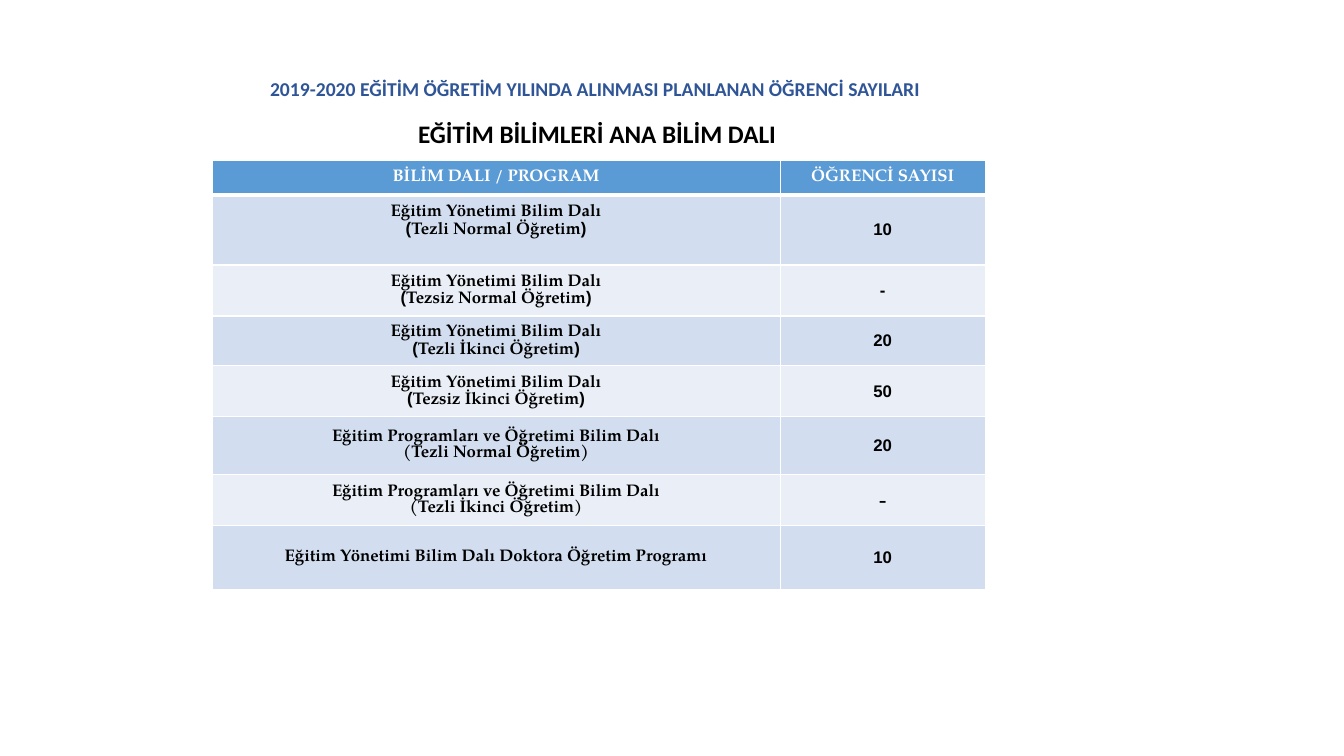
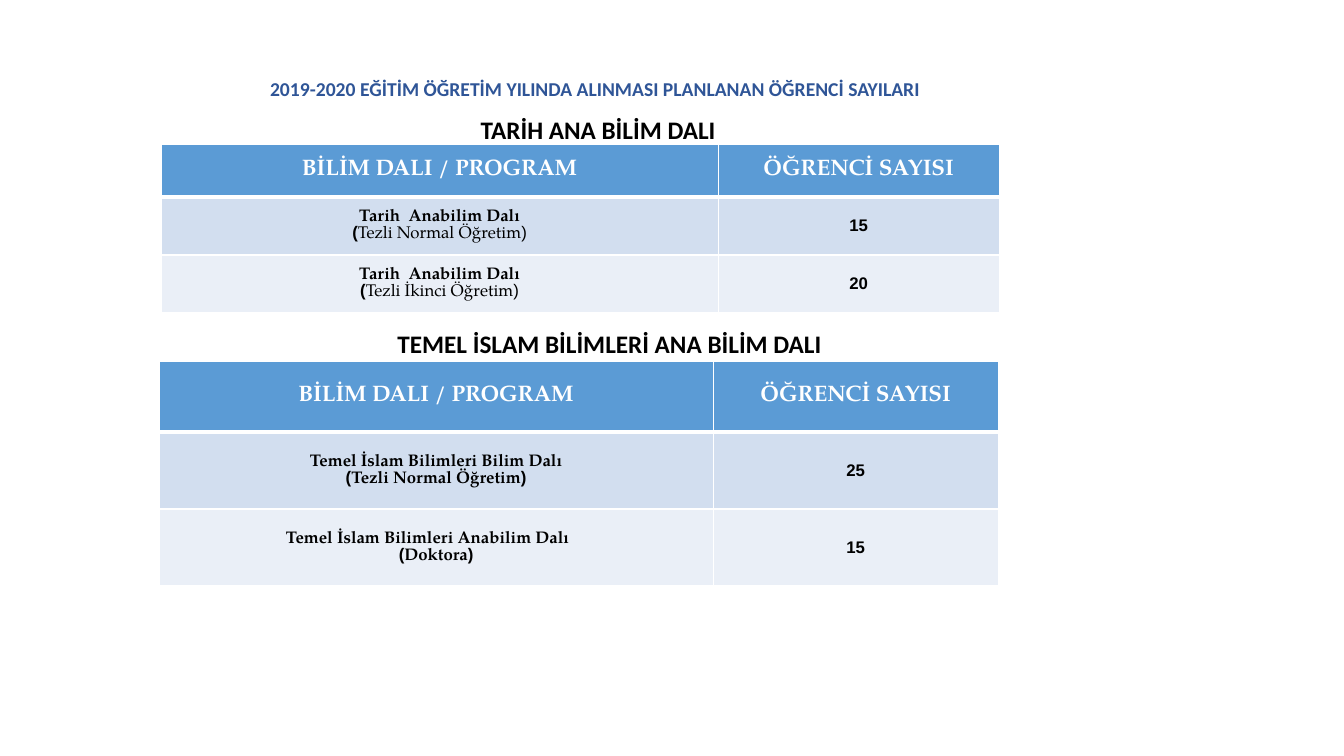
from lxml.etree import SubElement
from pptx import Presentation
from pptx.dml.color import RGBColor
from pptx.enum.text import MSO_ANCHOR, PP_ALIGN
from pptx.oxml import parse_xml
from pptx.oxml.ns import nsdecls, qn
from pptx.util import Emu, Inches, Pt

BLUE = RGBColor(0x5B, 0x9B, 0xD5)
NAVY = RGBColor(0x2F, 0x55, 0x97)
BAND_DARK = RGBColor(0xD2, 0xDE, 0xEF)
BAND_LIGHT = RGBColor(0xEA, 0xEF, 0xF7)
BLACK = RGBColor(0, 0, 0)
WHITE = RGBColor(0xFF, 0xFF, 0xFF)
SANS, SERIF, SCRIPT = "Calibri", "TeX Gyre Pagella", "Arial"

TITLE = "2019-2020 EĞİTİM ÖĞRETİM YILINDA ALINMASI PLANLANAN ÖĞRENCİ SAYILARI "
TITLE_BOX = (242, 72, 711, 34)
HEADERS = ("BİLİM DALI / PROGRAM", "ÖĞRENCİ SAYISI")

MANAGEMENT = "Eğitim Yönetimi Bilim Dalı"
CURRICULUM = "Eğitim Programları ve Öğretimi Bilim Dalı"
HISTORY = "Tarih  Anabilim Dalı"

SLIDES = [
    [
        dict(heading="EĞİTİM BİLİMLERİ ANA BİLİM DALI", heading_box=(406, 113, 382, 40),
             at=(212, 160), cols=(568, 205), heights=(35, 70, 51, 50, 51, 58, 51, 64),
             header_size=12,
             rows=[
                 dict(name=MANAGEMENT, mode="(Tezli Normal Öğretim)", count="10", bottom=23),
                 dict(name=MANAGEMENT, mode="(Tezsiz Normal Öğretim)", count="-"),
                 dict(name=MANAGEMENT, mode="(Tezli İkinci Öğretim)", count="20"),
                 dict(name=MANAGEMENT, mode="(Tezsiz İkinci Öğretim)", count="50"),
                 dict(name=CURRICULUM, mode="(Tezli Normal Öğretim)", count="20", rtl=False),
                 dict(name=CURRICULUM, mode="(Tezli İkinci Öğretim)", count="-", rtl=False,
                      plain_count=True),
                 dict(name="Eğitim Yönetimi Bilim Dalı Doktora Öğretim Programı", count="10"),
             ]),
    ],
    [
        dict(heading="TARİH ANA BİLİM DALI", heading_box=(469, 109, 258, 40),
             at=(161, 144), cols=(557, 281), heights=(53, 58, 58), header_size=16,
             rows=[
                 dict(name=HISTORY, mode="(Tezli Normal Öğretim)", count="15", light=True),
                 dict(name=HISTORY, mode="(Tezli İkinci Öğretim)", count="20", light=True),
             ]),
        dict(heading="TEMEL İSLAM BİLİMLERİ ANA BİLİM DALI", heading_box=(385, 323, 449, 40),
             at=(159, 361), cols=(554, 285), heights=(71, 77, 77), header_size=16,
             rows=[
                 dict(name="Temel İslam Bilimleri Bilim Dalı", mode="(Tezli Normal Öğretim)",
                      count="25"),
                 dict(name="Temel İslam Bilimleri Anabilim Dalı", mode="(Doktora)",
                      count="15", indent=17),
             ]),
    ],
]


def px(n):
    return Emu(round(n * 914400 / 100.8))


def add_run(p, text, size, color, font=SERIF, bold=True):
    r = p.add_run()
    r.text = text
    f = r.font
    f.size, f.bold, f.name = Pt(size), bold, font
    f.color.rgb = color
    if font == SERIF:
        SubElement(f._element, qn("a:cs")).set("typeface", SCRIPT)


def add_label(s, text, box, size, color, wrap):
    tf = s.shapes.add_textbox(*map(px, box)).text_frame
    tf.word_wrap = wrap
    p = tf.paragraphs[0]
    p.alignment = PP_ALIGN.CENTER
    add_run(p, text, size, color, SANS)


def set_borders(cell, top, bottom):
    tc_pr = cell._tc.get_or_add_tcPr()
    for i, (side, width) in enumerate((("L", 1), ("R", 1), ("T", top), ("B", bottom))):
        tc_pr.insert(i, parse_xml(
            f'<a:ln{side} {nsdecls("a")} w="{Pt(width)}"><a:solidFill>'
            f'<a:srgbClr val="{WHITE}"/></a:solidFill></a:ln{side}>'))


def fill_cell(cell, lines, fill, size=12, color=BLACK, font=SERIF, bold=True,
              rtl=True, bottom=5, indent=0):
    cell.fill.solid()
    cell.fill.fore_color.rgb = fill
    cell.vertical_anchor = MSO_ANCHOR.MIDDLE
    cell.margin_left = cell.margin_right = px(15)
    cell.margin_top, cell.margin_bottom = px(5), px(bottom)
    tf = cell.text_frame
    for i, runs in enumerate(lines):
        p = tf.add_paragraph() if i else tf.paragraphs[0]
        p.alignment = PP_ALIGN.CENTER
        p_pr = p._p.get_or_add_pPr()
        if rtl:
            p_pr.set("rtl", "1")
        if indent and i == 0:
            p_pr.set("marL", str(px(indent)))
        if len(lines) > 1:
            p.line_spacing = Pt(12.5 if rtl else 11.5)
        for text, weight in runs:
            add_run(p, text, size, color, font, bold and weight)


def program_lines(row):
    lines = [[(row["name"], True)]]
    mode = row.get("mode")
    if mode and row.get("light"):
        lines.append([(mode[:-1], False), (mode[-1], True)])
    elif mode:
        lines.append([(mode, True)])
    return lines


def add_program_table(s, spec):
    rows, cols, heights = spec["rows"], spec["cols"], spec["heights"]
    frame = s.shapes.add_table(len(heights), len(cols), *map(
        px, (*spec["at"], sum(cols), sum(heights))))
    table = frame.table
    for column, width in zip(table.columns, cols):
        column.width = px(width)
    for row, height in zip(table.rows, heights):
        row.height = px(height)
    for c, text in enumerate(HEADERS):
        fill_cell(table.cell(0, c), [[(text, True)]], BLUE, spec["header_size"], WHITE,
                  rtl=c > 0)
    for i, row in enumerate(rows, 1):
        fill = BAND_DARK if i % 2 else BAND_LIGHT
        fill_cell(table.cell(i, 0), program_lines(row), fill, rtl=row.get("rtl", True),
                  bottom=row.get("bottom", 5), indent=row.get("indent", 0))
        count_style = (dict(size=18, font=SANS, bold=False, rtl=False)
                       if row.get("plain_count") else {})
        fill_cell(table.cell(i, 1), [[(row["count"], True)]], fill, **count_style)
    for i in range(len(heights)):
        for c in range(len(cols)):
            set_borders(table.cell(i, c), 3 if i == 1 else 1, 1 if i else 3)


def main():
    prs = Presentation()
    prs.slide_width, prs.slide_height = Inches(13.33), Inches(7.5)
    for sections in SLIDES:
        s = prs.slides.add_slide(prs.slide_layouts[6])
        add_label(s, TITLE, TITLE_BOX, 14, NAVY, True)
        for section in sections:
            add_label(s, section["heading"], section["heading_box"], 18, BLACK, False)
            add_program_table(s, section)
    prs.save("out.pptx")


if __name__ == "__main__":
    main()
